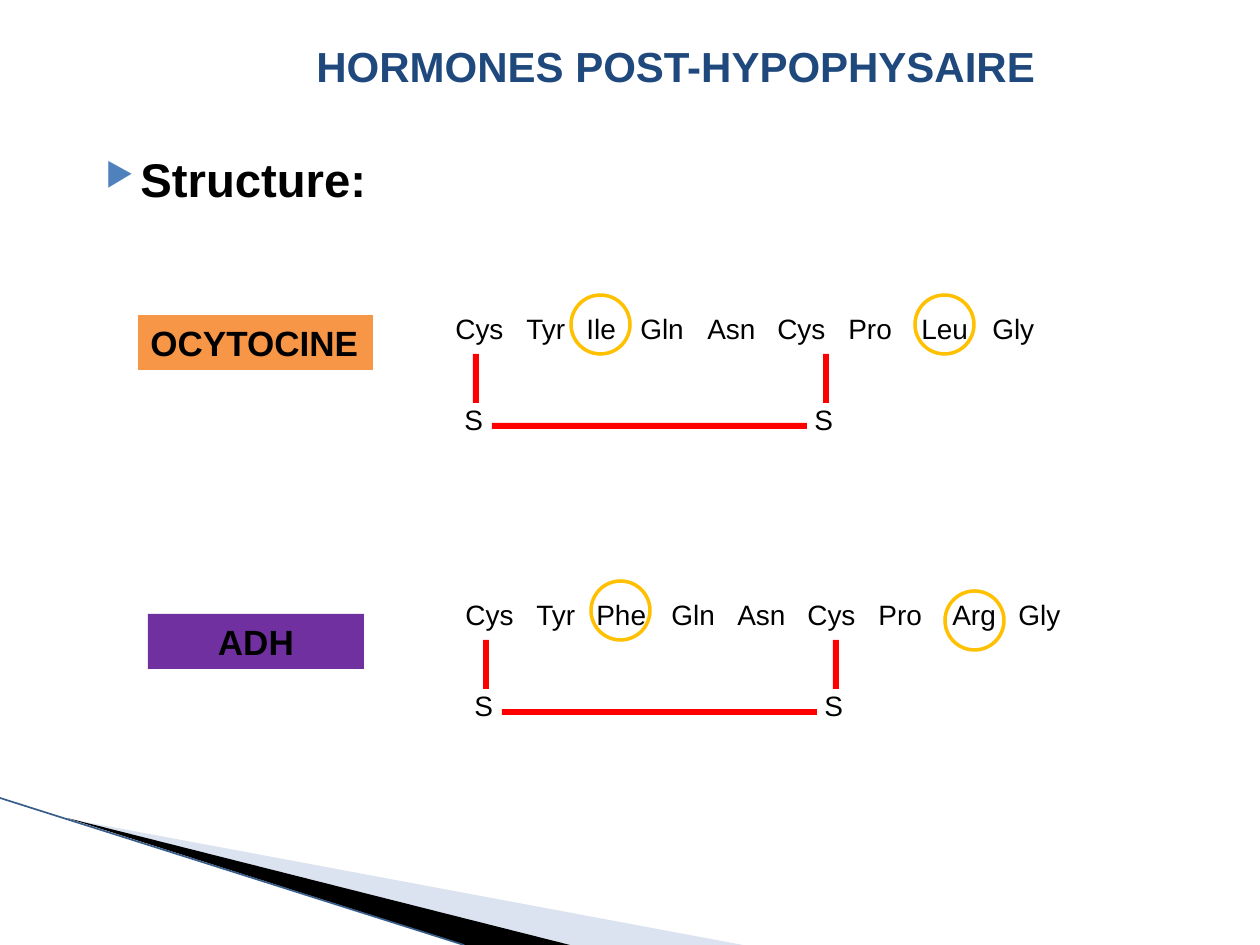
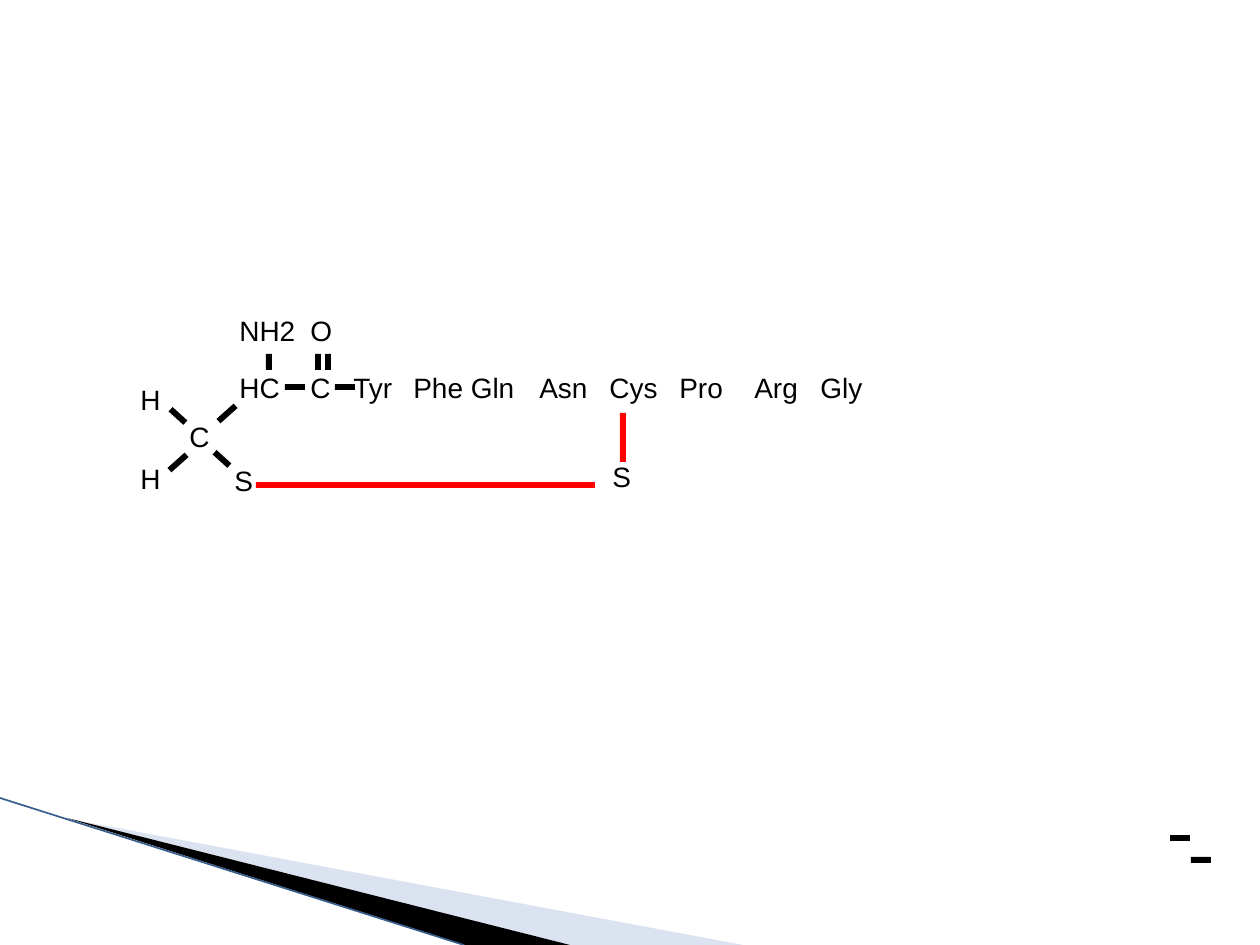
from lxml import etree
from pptx import Presentation
from pptx.dml.color import RGBColor
from pptx.enum.shapes import MSO_CONNECTOR, MSO_SHAPE
from pptx.enum.text import MSO_ANCHOR, PP_ALIGN
from pptx.oxml.ns import qn
from pptx.util import Pt

RECTANGLE, OVAL = MSO_SHAPE.RECTANGLE, MSO_SHAPE.OVAL
STRAIGHT = MSO_CONNECTOR.STRAIGHT
TOP, MIDDLE = MSO_ANCHOR.TOP, MSO_ANCHOR.MIDDLE
LEFT, CENTER = PP_ALIGN.LEFT, PP_ALIGN.CENTER

PX = 914400 / 126
hex_color = RGBColor.from_string
BLACK, RED, GOLD = "000000", "FF0000", "FFC000"
NAVY, BLUE, PALE, EDGE = "1F497D", "4F81BD", "A7B9DB", "385D8A"
ORANGE, PURPLE = "F79646", "7030A0"

TITLE = {"size": Pt(24), "bold": True}
HEADING = {"size": Pt(27), "bold": True}
LABEL = {"size": Pt(20), "bold": True}
CHEMISTRY = {"size": Pt(16), "bold": False}


def add_block(slide, kind, box, fill=None, outline=None, rotation=0):
    block = slide.shapes.add_shape(kind, *(round(v * PX) for v in box))
    block.shadow.inherit = False
    block.rotation = rotation
    if fill:
        block.fill.solid()
        block.fill.fore_color.rgb = hex_color(fill)
    else:
        block.fill.background()
    if outline:
        block.line.color.rgb = hex_color(outline)
        block.line.width = Pt(2)
    else:
        block.line.fill.background()
    return block


def add_text(slide, text, box, style, color=BLACK, wrap=True, anchor=TOP,
             align=LEFT, tabs=(), bullet=None, fill=None):
    if fill:
        holder = add_block(slide, RECTANGLE, box, fill)
    else:
        holder = slide.shapes.add_textbox(*(round(v * PX) for v in box))
    frame = holder.text_frame
    frame.word_wrap = wrap
    frame.vertical_anchor = anchor
    paragraph = frame.paragraphs[0]
    paragraph.alignment = align
    properties = paragraph._p.get_or_add_pPr()
    if bullet:
        properties.set("marL", str(round(50 * PX)))
        properties.set("indent", str(round(-35 * PX)))
        bullet_color = etree.SubElement(properties, qn("a:buClr"))
        etree.SubElement(bullet_color, qn("a:srgbClr"), val=BLUE)
        etree.SubElement(properties, qn("a:buSzPct"), val="68000")
        etree.SubElement(properties, qn("a:buChar"), char=bullet)
    if tabs:
        stops = etree.SubElement(properties, qn("a:tabLst"))
        for stop in tabs:
            etree.SubElement(stops, qn("a:tab"), pos=str(round(stop * PX)), algn="l")
    run = paragraph.add_run()
    run.text = text
    for name, value in style.items():
        setattr(run.font, name, value)
    run.font.name = "Arial"
    run.font.color.rgb = hex_color(color)


deck = Presentation()
deck.slide_width, deck.slide_height = round(1260 * PX), round(945 * PX)
hormones, detail = [deck.slides.add_slide(deck.slide_layouts[6]) for _ in range(2)]

for slide in (hormones, detail):
    for fill, alpha, start, corners in (
        (PALE, "40000", (69, 819), [(743, 945), (570, 945)]),
        (BLACK, "100000", (67, 818), [(570, 945), (465, 945)]),
    ):
        outline = slide.shapes.build_freeform(*start, scale=PX)
        outline.add_line_segments(corners)
        band = outline.convert_to_shape()
        band.shadow.inherit = False
        band.fill.solid()
        band.fill.fore_color.rgb = hex_color(fill)
        tint = band.fill._xPr.find(qn("a:solidFill"))[0]
        etree.SubElement(tint, qn("a:alpha"), val=alpha)
        band.line.fill.background()
    edge = slide.shapes.add_connector(
        STRAIGHT, 0, round(798 * PX), round(464 * PX), round(945 * PX))
    edge.line.color.rgb = hex_color(EDGE)
    edge.line.width = Pt(0.95)
    etree.SubElement(edge._element.spPr, qn("a:effectLst"))

add_text(hormones, "HORMONES POST-HYPOPHYSAIRE", (304, 20, 760, 91), TITLE,
         color=NAVY, anchor=MIDDLE)
add_text(hormones, "Structure:", (78, 144, 433, 71), HEADING, bullet="▶")

PEPTIDES = (
    ("Cys Tyr Ile Gln Asn Cys Pro Leu Gly", (443, 305),
     (71, 131, 185, 252, 322, 393, 466, 537)),
    ("Cys Tyr Phe Gln Asn Cys Pro Arg Gly", (453, 591),
     (71, 131, 206, 272, 342, 413, 487, 553)),
)
for residues, (left, top), tabs in PEPTIDES:
    add_text(hormones, residues.replace(" ", "\t"), (left, top, 650, 46),
             CHEMISTRY, tabs=tabs)
    add_block(hormones, RECTANGLE, (left + 49, top + 118, 315, 6), RED)
    for cysteine in (left, left + 350):
        add_block(hormones, RECTANGLE, (cysteine + 30, top + 49, 6, 49), RED)
        add_text(hormones, "S", (cysteine + 9, top + 91, 44, 46), CHEMISTRY, wrap=False)

add_text(hormones, "OCYTOCINE", (138, 315, 235, 55), LABEL, wrap=False, fill=ORANGE)
add_text(hormones, "ADH", (148, 614, 216, 55), LABEL, align=CENTER, fill=PURPLE)

for left, top in ((571, 295), (915, 295), (945, 591), (591, 581)):
    add_block(hormones, OVAL, (left, top, 59, 59), outline=GOLD)

add_text(detail, "HC\tC\tTyr\tPhe Gln\tAsn\tCys\tPro\tArg\tGly", (227, 364, 689, 46),
         CHEMISTRY, tabs=(71, 114, 174, 300, 370, 440, 515, 581))

for left, top in ((285, 384), (335, 384), (1170, 835), (1191, 857)):
    add_block(detail, RECTANGLE, (left, top, 20, 6), BLACK)
for left in (266, 315, 325):
    add_block(detail, RECTANGLE, (left, 354, 6, 16), BLACK)
for left, top, length, rotation in ((224, 402, 23, 48.2), (175, 406, 20, 312.2),
                                    (175, 451, 23, 48.2), (219, 449, 20, 312.2)):
    add_block(detail, RECTANGLE, (left, top, 6, length), BLACK, rotation=rotation)
for disulfide in ((256, 482, 339, 6), (620, 413, 6, 49)):
    add_block(detail, RECTANGLE, disulfide, RED)

for atom, left, top, width in (
    ("C", 177, 413, 45), ("H", 128, 455, 45), ("H", 128, 376, 45),
    ("NH2", 227, 307, 82), ("O", 298, 307, 48), ("S", 222, 457, 44), ("S", 600, 453, 44),
):
    add_text(detail, atom, (left, top, width, 46), CHEMISTRY, wrap=False)

deck.save("out.pptx")
